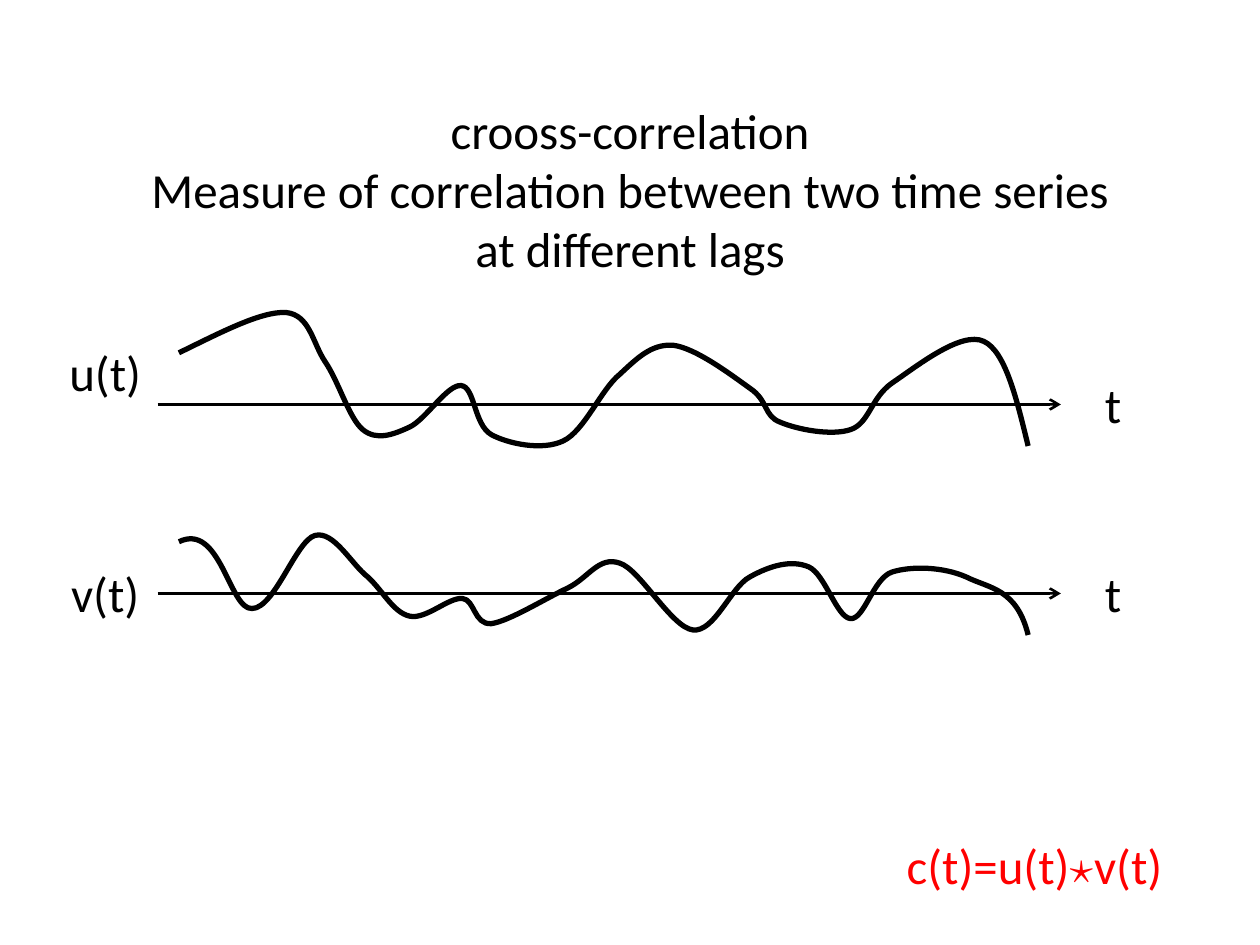
from dataclasses import dataclass

import pptx
import pptx.dml.color
import pptx.enum.shapes
import pptx.enum.text
import pptx.oxml
import pptx.oxml.ns
import pptx.util
from lxml import etree

PX = 9144  # EMU per px, 100 px to the inch
COLORS = {"ink": "000000", "formula": "FF0000"}
BODY_FONT = "Calibri"
SYMBOL_FONT = "Times New Roman"
AXIS_LEFT, AXIS_RIGHT = 125, 842
qn = pptx.oxml.ns.qn


@dataclass
class Label:
    left: int
    top: int
    width: int
    runs: list[tuple[str, str]]
    color: str = "ink"


@dataclass
class Series:
    axis_y: int
    grouped: bool
    points: list[tuple[int, int]]  # start, then two controls and an end per curve


TITLE = ["crooss-correlation",
         "Measure of correlation between two time series",
         "at different lags"]

LABELS = [
    Label(850, 292, 67, [("t", BODY_FONT)]),
    Label(850, 442, 67, [("t", BODY_FONT)]),
    Label(42, 267, 83, [("u(t)", BODY_FONT)]),
    Label(42, 442, 83, [("v(t)", BODY_FONT)]),
    Label(700, 658, 242, [("c(t)=u(t)", BODY_FONT), ("⋆", SYMBOL_FONT),
                          ("v(t)", BODY_FONT)], "formula"),
]

SERIES = [
    Series(321, True, [
        (142, 280),
        (175, 264), (207, 247), (227, 248),
        (246, 250), (248, 272), (258, 287),
        (269, 303), (277, 332), (288, 341),
        (299, 350), (312, 345), (325, 339),
        (338, 333), (355, 305), (366, 306),
        (377, 307), (376, 337), (390, 345),
        (403, 352), (430, 358), (447, 350),
        (464, 342), (477, 309), (492, 297),
        (506, 284), (517, 273), (534, 274),
        (552, 276), (581, 298), (595, 308),
        (610, 318), (606, 330), (619, 335),
        (633, 341), (660, 346), (675, 341),
        (690, 336), (691, 316), (708, 304),
        (726, 292), (763, 262), (781, 271),
        (798, 279), (807, 317), (816, 354)]),
    Series(471, False, [
        (142, 430),
        (175, 414), (182, 484), (200, 483),
        (218, 483), (235, 429), (250, 425),
        (265, 421), (279, 448), (292, 458),
        (304, 469), (312, 486), (325, 489),
        (338, 492), (356, 474), (367, 475),
        (377, 476), (376, 496), (390, 495),
        (404, 493), (433, 475), (450, 467),
        (467, 459), (475, 441), (492, 447),
        (508, 452), (533, 498), (550, 500),
        (567, 502), (580, 466), (595, 458),
        (611, 449), (628, 444), (642, 450),
        (655, 456), (664, 490), (675, 491),
        (686, 492), (693, 459), (708, 454),
        (724, 449), (749, 450), (767, 458),
        (785, 467), (807, 467), (816, 504)]),
]


def rgb(name: str) -> pptx.dml.color.RGBColor:
    return pptx.dml.color.RGBColor.from_string(COLORS[name])


def style_line(sp, width: float) -> None:
    sp.line.color.rgb = rgb("ink")
    sp.line.width = pptx.util.Pt(width)


def add_run(p, text: str, font: str, color: str) -> None:
    r = p.add_run()
    r.text = text
    r.font.size = pptx.util.Pt(28)
    r.font.name = font
    r.font.color.rgb = rgb(color)


def add_axis(shapes, y: int) -> None:
    sp = shapes.add_connector(pptx.enum.shapes.MSO_CONNECTOR.STRAIGHT,
                              AXIS_LEFT * PX, y * PX, AXIS_RIGHT * PX, y * PX)
    style_line(sp, 1.5)
    etree.SubElement(sp.line._get_or_add_ln(), qn("a:tailEnd"), type="arrow")
    etree.SubElement(sp._element.spPr, qn("a:effectLst"))


def add_curve(shapes, points: list[tuple[int, int]]) -> None:
    builder = shapes.build_freeform(*points[0], scale=PX)
    builder.add_line_segments(points[1:], close=False)
    sp = builder.convert_to_shape()
    sp.shadow.inherit = False
    sp.fill.background()
    style_line(sp, 3)
    # Turn each three straight segments into one Bézier curve
    outline = sp._element.find(".//" + qn("a:path"))
    segments = outline.findall(qn("a:lnTo"))
    for i in range(0, len(segments), 3):
        curve = etree.SubElement(outline, qn("a:cubicBezTo"))
        for segment in segments[i:i + 3]:
            curve.append(segment[0])
            outline.remove(segment)


def add_series(slide, series: Series) -> None:
    shapes = slide.shapes
    if series.grouped:
        shapes = shapes.add_group_shape().shapes
    add_axis(shapes, series.axis_y)
    add_curve(shapes, series.points)


def add_label(slide, label: Label) -> None:
    sp = slide.shapes.add_textbox(label.left * PX, label.top * PX,
                                  label.width * PX, 57 * PX)
    tf = sp.text_frame
    tf.word_wrap = True
    tf.auto_size = pptx.enum.text.MSO_AUTO_SIZE.SHAPE_TO_FIT_TEXT
    p = tf.paragraphs[0]
    p.alignment = pptx.enum.text.PP_ALIGN.CENTER
    for text, font in label.runs:
        add_run(p, text, font, label.color)


def fill_title(sp) -> None:
    sp.left, sp.top, sp.width, sp.height = 0, 75 * PX, 1000 * PX, 151 * PX
    tf = sp.text_frame
    tf.vertical_anchor = pptx.enum.text.MSO_ANCHOR.TOP
    tf.auto_size = pptx.enum.text.MSO_AUTO_SIZE.SHAPE_TO_FIT_TEXT
    for i, text in enumerate(TITLE):
        p = tf.add_paragraph() if i else tf.paragraphs[0]
        p.alignment = pptx.enum.text.PP_ALIGN.CENTER
        add_run(p, text, BODY_FONT, "ink")


def main() -> None:
    prs = pptx.Presentation()
    prs.slide_width, prs.slide_height = 1000 * PX, 750 * PX
    slide = prs.slides.add_slide(prs.slide_layouts[5])  # Title Only

    fill_title(slide.shapes.title)
    for series in SERIES:
        add_series(slide, series)
    for label in LABELS:
        add_label(slide, label)

    prs.save("out.pptx")


if __name__ == "__main__":
    main()
